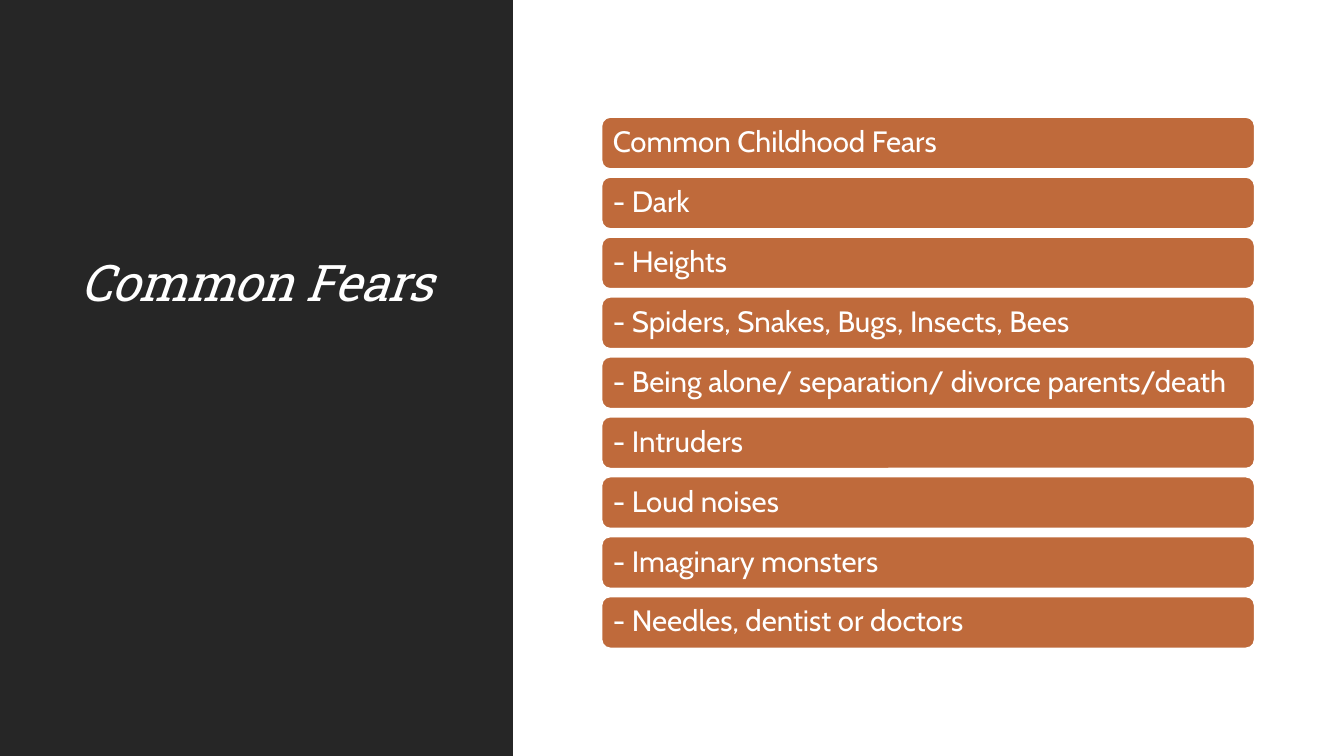
from dataclasses import dataclass

from pptx import Presentation
from pptx import util as u
from pptx.dml.color import RGBColor
from pptx.enum import shapes, text


@dataclass(frozen=True)
class Theme:
    panel: str = "262626"
    bar: str = "BF6A3B"
    light: str = "FFFFFF"
    title_font: str = "Roboto Slab"
    body_font: str = "Cabin"
    title_size: float = 36
    body_size: float = 21
    outline: float = 1.25


FEARS = [
    "Common Childhood Fears",
    "- Dark",
    "- Heights",
    "- Spiders, Snakes, Bugs, Insects, Bees",
    "- Being alone/ separation/ divorce parents/death",
    "- Intruders",
    "- Loud noises",
    "- Imaginary monsters",
    "- Needles, dentist or doctors",
]
BAR_LEFT, BAR_TOP, BAR_WIDTH, BAR_HEIGHT = 15.16, 2.95, 16.46, 1.31
BAR_PITCH = 1.51


def write(box, words, *, font, size, color, anchor, italic=False, tracking=0):
    """Fill the box with one left-aligned paragraph; tracking is in points."""
    frame = box.text_frame
    frame.word_wrap = True
    frame.auto_size = text.MSO_AUTO_SIZE.NONE
    frame.vertical_anchor = anchor
    para = frame.paragraphs[0]
    para.alignment = text.PP_ALIGN.LEFT
    para.line_spacing = 0.9
    span = para.add_run()
    span.text = words
    span.font.name = font
    span.font.size = u.Pt(size)
    span.font.italic = italic
    span.font.color.rgb = RGBColor.from_string(color)
    if tracking:
        span.font._element.set("spc", str(round(tracking * 100)))


class SlideBuilder:
    def __init__(self, page, theme):
        self.page = page
        self.theme = theme

    def block(self, kind, left, top, width, height, fill, line=None):
        box = self.page.shapes.add_shape(
            kind, u.Cm(left), u.Cm(top), u.Cm(width), u.Cm(height))
        box.shadow.inherit = False
        box.fill.solid()
        box.fill.fore_color.rgb = RGBColor.from_string(fill)
        if line:
            box.line.color.rgb = RGBColor.from_string(line)
            box.line.width = u.Pt(self.theme.outline)
        else:
            box.line.fill.background()
        return box

    def panel(self, width, height):
        self.block(shapes.MSO_SHAPE.RECTANGLE, 0, 0, width, height,
                   self.theme.panel)

    def title(self, words, left, top, width, height):
        box = self.page.shapes.title
        box.left, box.top = u.Cm(left), u.Cm(top)
        box.width, box.height = u.Cm(width), u.Cm(height)
        write(box, words, font=self.theme.title_font,
              size=self.theme.title_size, color=self.theme.light,
              anchor=text.MSO_ANCHOR.BOTTOM, italic=True, tracking=-0.5)
        # Appending moves the placeholder in front of the panel.
        self.page.shapes._spTree.append(box._element)

    def bar(self, words, left, top, width, height):
        box = self.block(shapes.MSO_SHAPE.ROUNDED_RECTANGLE, left, top,
                         width, height, self.theme.bar, self.theme.light)
        frame = box.text_frame
        frame.margin_left = frame.margin_right = u.Cm(0.22)
        frame.margin_top = frame.margin_bottom = u.Cm(0.22)
        write(box, words, font=self.theme.body_font,
              size=self.theme.body_size, color=self.theme.light,
              anchor=text.MSO_ANCHOR.MIDDLE)


def main():
    deck = Presentation()
    deck.slide_width, deck.slide_height = u.Cm(33.87), u.Cm(19.05)
    title_only = deck.slide_layouts[5]
    builder = SlideBuilder(deck.slides.add_slide(title_only), Theme())

    builder.panel(12.93, 19.05)
    builder.title("Common Fears", 1.78, 2.18, 9.78, 5.82)
    for index, fear in enumerate(FEARS):
        builder.bar(fear, BAR_LEFT, BAR_TOP + index * BAR_PITCH,
                    BAR_WIDTH, BAR_HEIGHT)

    deck.save("out.pptx")


if __name__ == "__main__":
    main()
